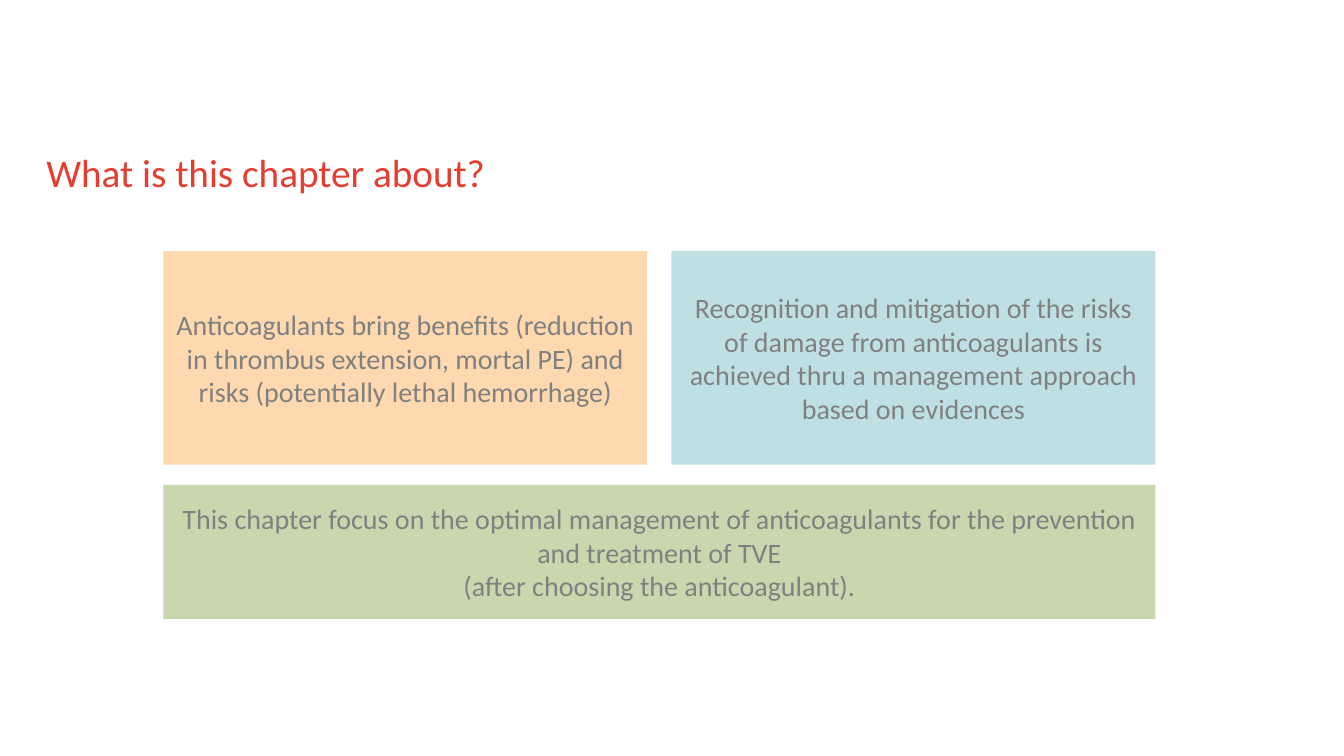
"""Build the slide that says what the chapter is about."""
from pptx import Presentation
from pptx.dml.color import RGBColor
from pptx.enum.shapes import MSO_SHAPE as Shape
from pptx.enum.text import MSO_ANCHOR as Anchor, PP_ALIGN as Align
from pptx.util import Inches, Pt

RED = RGBColor(0xE5, 0x3E, 0x31)
GREY = RGBColor(0x80, 0x80, 0x80)
ORANGE = RGBColor(0xFE, 0xD9, 0xB0)
BLUE = RGBColor(0xBE, 0xE0, 0xE4)
GREEN = RGBColor(0xC9, 0xD7, 0xAF)

TITLE = "What is this chapter about?"
PANELS = [
    {"column": 0, "span": 1, "row": 0, "fill": ORANGE, "lines": [
        "Anticoagulants bring benefits (reduction in thrombus extension, "
        "mortal PE) and risks (potentially lethal hemorrhage)"]},
    {"column": 1, "span": 1, "row": 0, "fill": BLUE, "lines": [
        "Recognition and mitigation of the risks of damage from anticoagulants "
        "is achieved thru a management approach based on evidences"]},
    {"column": 0, "span": 2, "row": 1, "fill": GREEN, "lines": [
        "This chapter focus on the optimal management of anticoagulants "
        "for the prevention and treatment of TVE",
        "(after choosing the anticoagulant)."]},
]

LEFT, TOP = 1.62, 2.49
COLUMN_WIDTH, ROW_HEIGHTS = 4.8, (2.12, 1.33)
COLUMN_GAP, ROW_GAP = 0.24, 0.2

TITLE_FRAME = {"word_wrap": True, "vertical_anchor": Anchor.TOP, "margin_left": 0,
               "margin_top": 0, "margin_right": 0, "margin_bottom": 0}
PANEL_FRAME = {"word_wrap": True, "vertical_anchor": Anchor.MIDDLE}
TITLE_FONT = {"name": "Calibri", "size": Pt(28)}
PANEL_FONT = {"name": "Calibri", "size": Pt(20)}


def write(frame, lines, frame_format, font_format, color, align):
    """Fill a text frame with one paragraph per line."""
    frame.text = "\n".join(lines)
    for key, value in frame_format.items():
        setattr(frame, key, value)
    for paragraph in frame.paragraphs:
        paragraph.alignment = align
        for key, value in font_format.items():
            setattr(paragraph.font, key, value)
        paragraph.font.color.rgb = color


def place(column, span, row):
    """Return left, top, width and height of a panel on the grid."""
    return [Inches(length) for length in (
        LEFT + column * (COLUMN_WIDTH + COLUMN_GAP),
        TOP + sum(ROW_HEIGHTS[:row]) + row * ROW_GAP,
        span * COLUMN_WIDTH + (span - 1) * COLUMN_GAP,
        ROW_HEIGHTS[row])]


def main():
    """Lay out the title and the panels, then save."""
    deck = Presentation()
    deck.slide_width, deck.slide_height = Inches(13.33), Inches(7.5)
    slide = deck.slides.add_slide(deck.slide_layouts[5])

    title = slide.shapes.title
    title.left, title.top = Inches(0.46), Inches(1.47)
    title.width, title.height = Inches(12), Inches(0.78)
    write(title.text_frame, [TITLE], TITLE_FRAME, TITLE_FONT, RED, Align.LEFT)

    for content in PANELS:
        position = place(content["column"], content["span"], content["row"])
        panel = slide.shapes.add_shape(Shape.RECTANGLE, *position)
        panel.shadow.inherit = False
        panel.fill.solid()
        panel.fill.fore_color.rgb = content["fill"]
        panel.line.fill.background()
        write(panel.text_frame, content["lines"], PANEL_FRAME, PANEL_FONT,
              GREY, Align.CENTER)

    deck.save("out.pptx")


if __name__ == "__main__":
    main()
